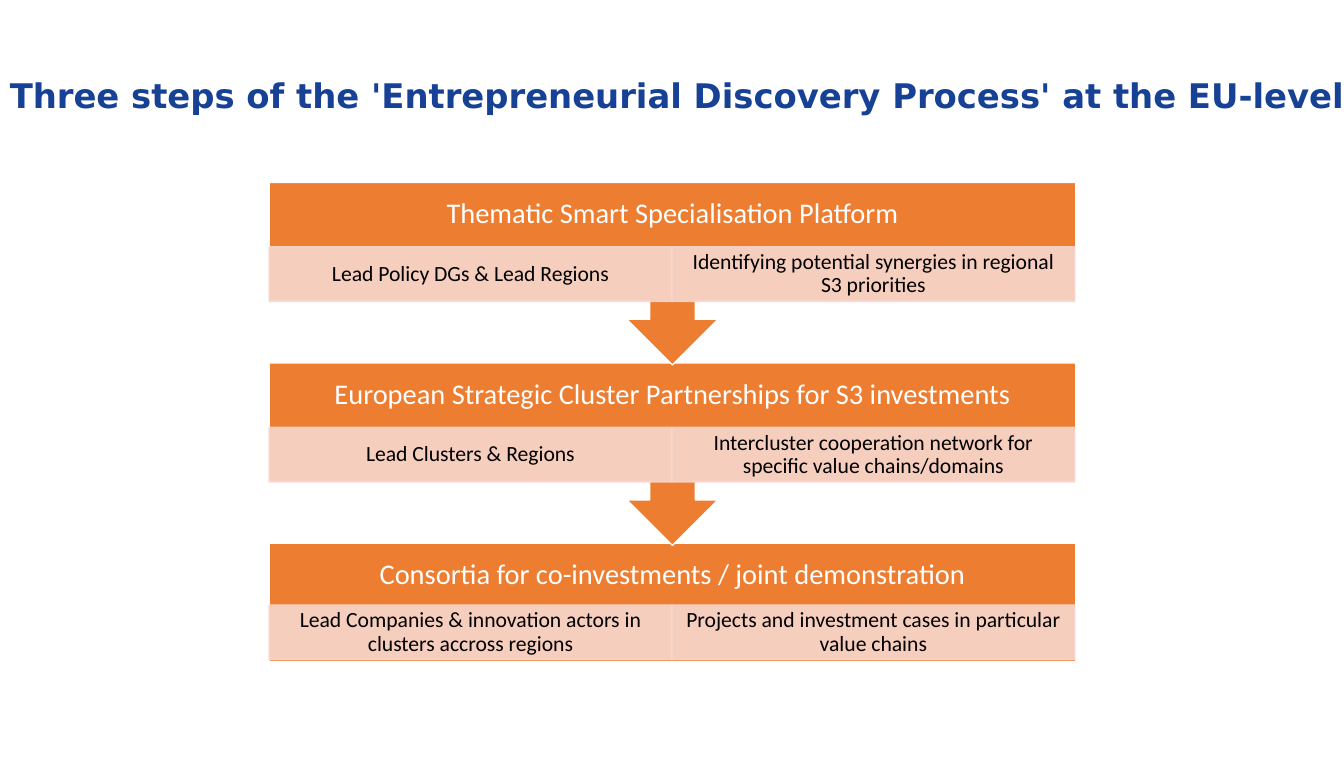
from lxml import etree
from pptx import Presentation, util as u
from pptx.dml.color import RGBColor
from pptx.enum import shapes, text
from pptx.oxml.ns import qn

ORANGE, PEACH, WHITE, BLACK, BLUE = "ED7D31", "F8D7CE", "FFFFFF", "000000", "164194"
LEFT, TOP, WIDTH, PITCH = 2.76, 1.87, 8.27, 1.85
HEADER_H, CELL_W, CELL_H = 0.66, 4.13, 0.56
RECT, CALLOUT = shapes.MSO_SHAPE.RECTANGLE, shapes.MSO_SHAPE.DOWN_ARROW_CALLOUT

STEPS = [
    ("Thematic Smart Specialisation Platform", CALLOUT, 1.87, 0.66,
     ["Lead Policy DGs & Lead Regions",
      "Identifying potential synergies in regional S3 priorities"]),
    ("European Strategic Cluster Partnerships for S3 investments", CALLOUT, 1.87, 0.66,
     ["Lead Clusters & Regions",
      "Intercluster cooperation network for specific value chains/domains"]),
    ("Consortia for co-investments / joint demonstration", RECT, 1.21, 0.63,
     ["Lead Companies & innovation actors in clusters accross regions",
      "Projects and investment cases in particular value chains"]),
]


def rgb(color):
    return RGBColor.from_string(color)


class Deck:
    font = "Calibri"

    def __init__(self, width, height):
        self.prs = Presentation()
        self.prs.slide_width, self.prs.slide_height = u.Inches(width), u.Inches(height)
        self.s = self.prs.slides.add_slide(self.prs.slide_layouts[6])

    def set_text(self, sp, words, size, color, inset=(0, 0), spacing=0.9, font=None,
                 bold=False, align=text.PP_ALIGN.CENTER, anchor=text.MSO_ANCHOR.MIDDLE):
        tf = sp.text_frame
        tf.word_wrap = True
        tf.vertical_anchor = anchor
        tf.margin_left = tf.margin_right = u.Inches(inset[0])
        tf.margin_top = tf.margin_bottom = u.Inches(inset[1])
        p = tf.paragraphs[0]
        p.text = words
        p.alignment, p.line_spacing = align, spacing
        p.font.name, p.font.size, p.font.bold = font or self.font, u.Pt(size), bold
        p.font.color.rgb = rgb(color)

    def label(self, box, words, size, color, **style):
        sp = self.s.shapes.add_textbox(*map(u.Inches, box))
        self.set_text(sp, words, size, color, **style)

    def shape(self, kind, box, fill, line, opacity=100):
        sp = self.s.shapes.add_shape(kind, *map(u.Inches, box))
        sp.shadow.inherit = False
        sp.fill.solid()
        sp.fill.fore_color.rgb = rgb(fill)
        sp.line.color.rgb = rgb(line)
        sp.line.width = u.Pt(1)
        if opacity < 100:
            for color in sp._element.spPr.iter(qn("a:srgbClr")):
                etree.SubElement(color, qn("a:alpha"), val=str(opacity * 1000))
        return sp

    def cell(self, box, words):
        sp = self.shape(RECT, box, PEACH, PEACH, opacity=90)
        self.set_text(sp, words, 16, BLACK, inset=(0.12, 0.02))

    def step(self, top, heading, kind, height, cell_offset, cells):
        self.shape(kind, (LEFT, top, WIDTH, height), ORANGE, WHITE)
        self.label((LEFT, top, WIDTH, HEADER_H), heading, 21, WHITE, inset=(0.16, 0.16))
        for i, words in enumerate(cells):
            self.cell((LEFT + i * CELL_W, top + cell_offset, CELL_W, CELL_H), words)


def main():
    deck = Deck(13.78, 7.87)
    deck.label((0.1, 0.72, 13.68, 0.99),
               "Three steps of the 'Entrepreneurial Discovery Process' at the EU-level",
               25, BLUE, spacing=1.1, font="DejaVu Sans", bold=True,
               align=text.PP_ALIGN.LEFT, anchor=text.MSO_ANCHOR.TOP)
    for i, step in reversed(list(enumerate(STEPS))):
        deck.step(TOP + i * PITCH, *step)
    deck.prs.save("out.pptx")


if __name__ == "__main__":
    main()
